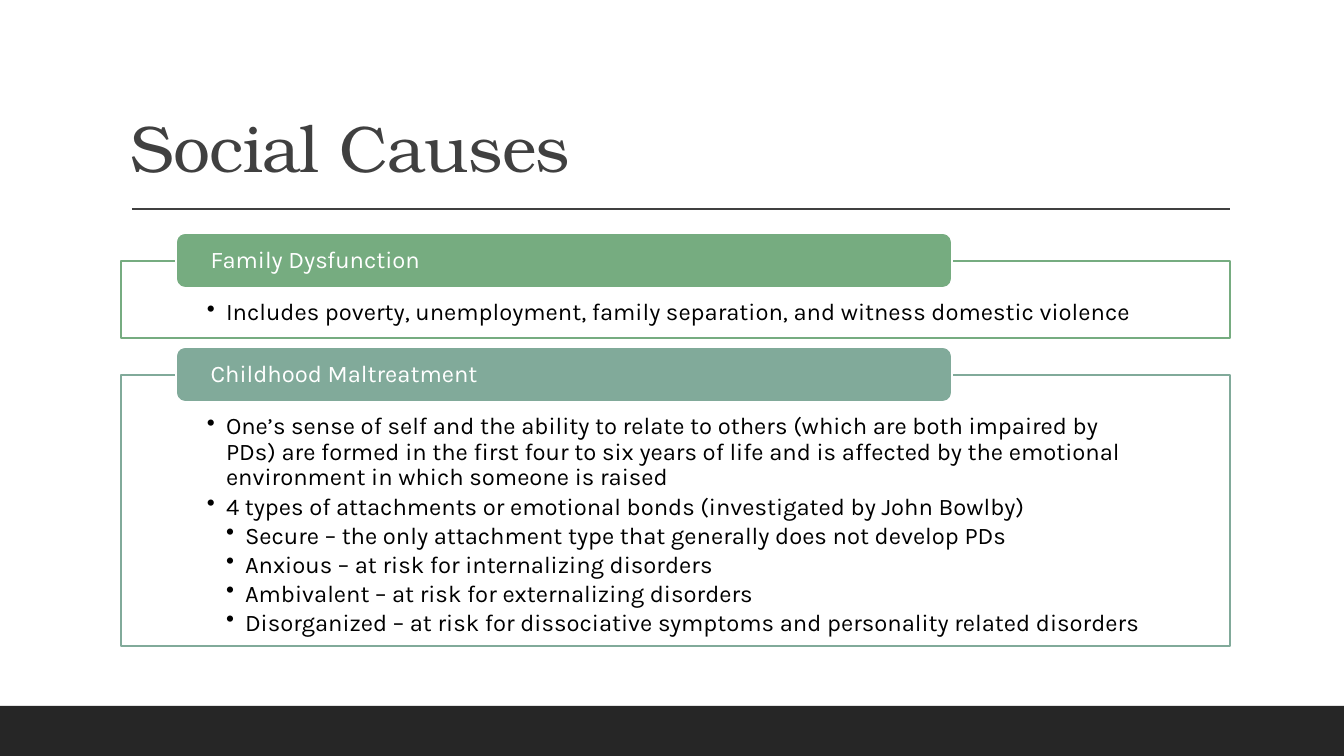
"""Builds the Social Causes slide: a title over two labelled panels."""
import dataclasses

import lxml.etree
import pptx
import pptx.dml.color
import pptx.enum.shapes
import pptx.enum.text
import pptx.oxml.ns
import pptx.util

TITLE = "Social Causes"
CAUSES = [
    {
        "label": "Family Dysfunction", "color": "76AC80", "top": 261, "height": 77,
        "points": [
            (1, "Includes poverty, unemployment, family separation, and witness domestic violence"),
        ],
    },
    {
        "label": "Childhood Maltreatment", "color": "81AA9A", "top": 375, "height": 271,
        "points": [
            (1, "One’s sense of self and the ability to relate to others (which are both impaired by PDs) "
                "are formed in the first four to six years of life and is affected by the emotional "
                "environment in which someone is raised"),
            (1, "4 types of attachments or emotional bonds (investigated by John Bowlby)"),
            (2, "Secure – the only attachment type that generally does not develop PDs"),
            (2, "Anxious – at risk for internalizing disorders"),
            (2, "Ambivalent – at risk for externalizing disorders"),
            (2, "Disorganized – at risk for dissociative symptoms and personality related disorders"),
        ],
    },
]


@dataclasses.dataclass(frozen=True)
class Theme:
    """Colours, fonts and type sizes."""
    title_color: str = "404040"
    footer: str = "262626"
    paper: str = "FFFFFF"
    ink: str = "000000"
    title_font: str = "TeX Gyre Bonum"
    body_font: str = "Karla"
    title_size: int = 47
    body_size: int = 17


THEME = Theme()
EMU_PER_PX = 914400 / 100.8
SLIDE_WIDTH, SLIDE_HEIGHT = 1344, 756
PANEL_LEFT, PANEL_WIDTH = 121, 1109
TAB_LEFT, TAB_WIDTH, TAB_HEIGHT = 176, 776, 55
RULE_LEFT, RULE_RIGHT, RULE_TOP = 132, 1230, 209
FOOTER_TOP = 706
BULLET_INDENT = 19


def px(length):
    return pptx.util.Emu(round(length * EMU_PER_PX))


def rgb(color):
    return pptx.dml.color.RGBColor.from_string(color)


def add_child(parent, tag, **attributes):
    return lxml.etree.SubElement(parent, pptx.oxml.ns.qn(tag), attributes)


def write(shape, lines, *, size=THEME.body_size, font=THEME.body_font, color=THEME.ink,
          anchor="TOP", insets=(10, 5, 10, 5), after=0, spacing=None):
    """Fill a shape with (level, text) lines; levels above zero get bullets."""
    frame = shape.text_frame
    frame.word_wrap = True
    frame.auto_size = pptx.enum.text.MSO_AUTO_SIZE.NONE
    frame.vertical_anchor = pptx.enum.text.MSO_ANCHOR[anchor]
    frame.margin_left, frame.margin_top, frame.margin_right, frame.margin_bottom = map(px, insets)
    for index, (level, text) in enumerate(lines):
        paragraph = frame.add_paragraph() if index else frame.paragraphs[0]
        paragraph.alignment = pptx.enum.text.PP_ALIGN.LEFT
        paragraph.level = level
        paragraph.line_spacing = 0.9
        paragraph.space_after = pptx.util.Pt(after)
        if level:
            properties = paragraph._p.get_or_add_pPr()
            properties.set("marL", str(px(BULLET_INDENT * level)))
            properties.set("indent", str(-px(BULLET_INDENT)))
            add_child(properties, "a:buChar", char="•")
        run = paragraph.add_run()
        run.text = text
        run.font.size = pptx.util.Pt(size)
        run.font.name = font
        run.font.color.rgb = rgb(color)
        if spacing is not None:
            run._r.get_or_add_rPr().set("spc", str(spacing))


def add_block(slide, kind, box, fill, line=None, opacity=None):
    block = slide.shapes.add_shape(pptx.enum.shapes.MSO_SHAPE[kind], *map(px, box))
    block.shadow.inherit = False
    block.fill.solid()
    block.fill.fore_color.rgb = rgb(fill)
    if opacity is not None:
        fill_color = block._element.spPr.find(".//" + pptx.oxml.ns.qn("a:srgbClr"))
        add_child(fill_color, "a:alpha", val=str(opacity * 1000))
    if line:
        block.line.color.rgb = rgb(line)
        block.line.width = pptx.util.Pt(1.25)
    else:
        block.line.fill.background()
    return block


def add_cause(slide, cause):
    panel_box = (PANEL_LEFT, cause["top"], PANEL_WIDTH, cause["height"])
    panel = add_block(slide, "RECTANGLE", panel_box, THEME.paper, cause["color"], opacity=90)
    write(panel, cause["points"], insets=(86, 39, 86, 13), after=2.4)
    tab_box = (TAB_LEFT, cause["top"] - TAB_HEIGHT // 2 - 1, TAB_WIDTH, TAB_HEIGHT)
    tab = add_block(slide, "ROUNDED_RECTANGLE", tab_box, cause["color"], THEME.paper)
    write(tab, [(0, cause["label"])], color=THEME.paper, anchor="MIDDLE", insets=(32, 0, 32, 0))


def main():
    deck = pptx.Presentation()
    deck.slide_width, deck.slide_height = px(SLIDE_WIDTH), px(SLIDE_HEIGHT)
    slide = deck.slides.add_slide(deck.slide_layouts[5])

    title = slide.shapes.title
    title.left, title.top, title.width, title.height = map(px, (PANEL_LEFT, 31, PANEL_WIDTH, 161))
    write(title, [(0, TITLE)], size=THEME.title_size, font=THEME.title_font,
          color=THEME.title_color, anchor="BOTTOM", spacing=-50)

    rule = slide.shapes.add_connector(
        pptx.enum.shapes.MSO_CONNECTOR.STRAIGHT,
        *map(px, (RULE_LEFT, RULE_TOP, RULE_RIGHT, RULE_TOP)))
    rule.line.color.rgb = rgb(THEME.title_color)
    rule.line.width = pptx.util.Pt(1)
    add_child(rule._element.spPr, "a:effectLst")

    footer_box = (0, FOOTER_TOP, SLIDE_WIDTH, SLIDE_HEIGHT - FOOTER_TOP)
    add_block(slide, "RECTANGLE", footer_box, THEME.footer)
    for cause in CAUSES:
        add_cause(slide, cause)
    deck.save("out.pptx")


if __name__ == "__main__":
    main()
